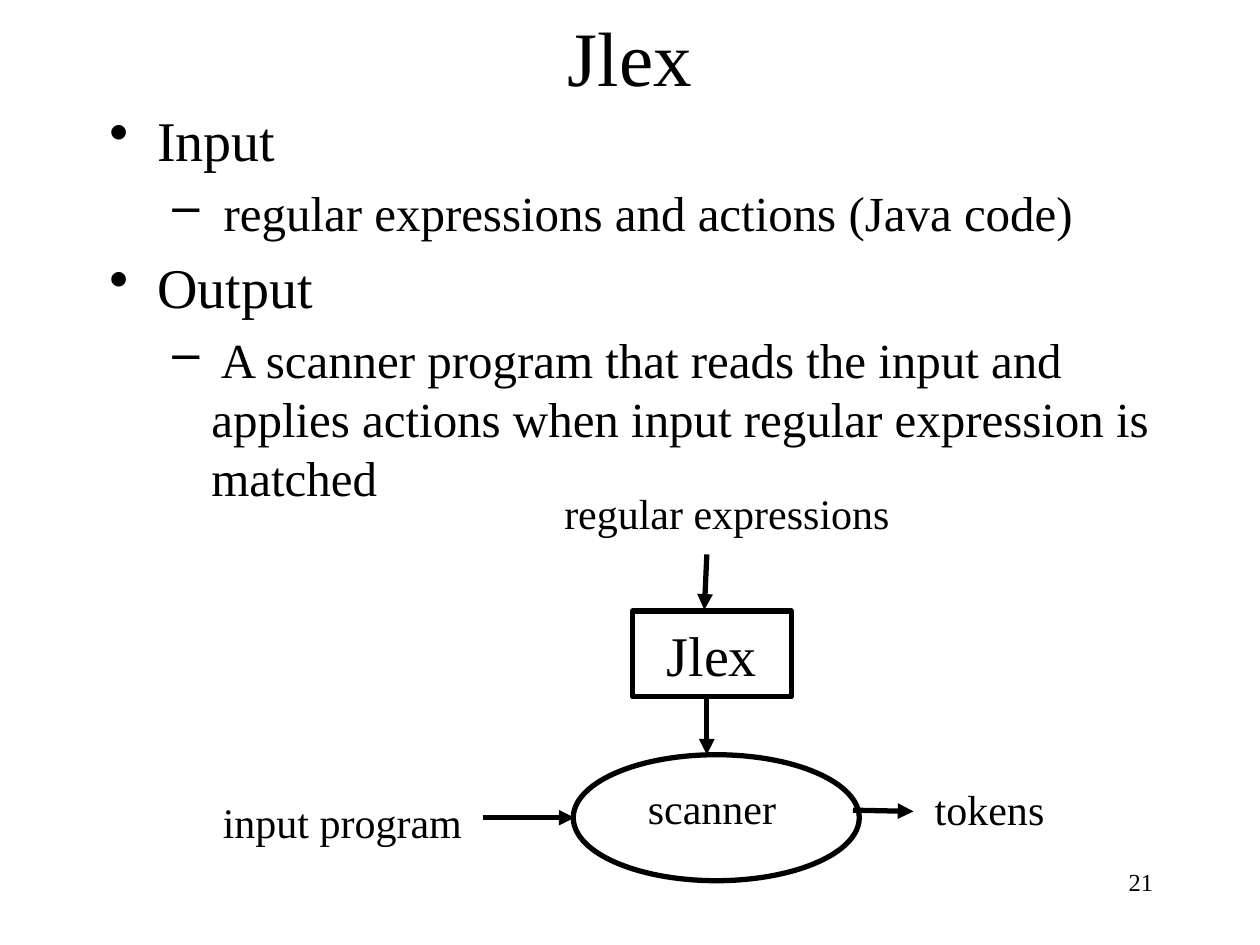
"""Build the Jlex slide: a bulleted outline above a scanner-generator diagram."""
from dataclasses import dataclass

import lxml.etree
import pptx
import pptx.dml.color
import pptx.enum.shapes
import pptx.enum.text
import pptx.oxml.ns
import pptx.util

COLUMNS, ROWS = 100, 75
CELL = pptx.util.Inches(0.1)
FONT = "Times New Roman"
INK = "000000"
ALIGN = pptx.enum.text.PP_ALIGN
ANCHOR = pptx.enum.text.MSO_ANCHOR
SHAPE = pptx.enum.shapes.MSO_SHAPE


@dataclass
class Area:
    column: float
    row: float
    columns: float
    rows: float


@dataclass
class Label:
    text: str
    area: Area
    size: int = 24
    align: ALIGN = ALIGN.LEFT
    anchor: ANCHOR = ANCHOR.MIDDLE
    wrap: bool = True


@dataclass
class Arrow:
    start: tuple[float, float]
    end: tuple[float, float]


@dataclass
class Node:
    outline: SHAPE
    area: Area
    text: str = ""


@dataclass
class Bullet:
    text: str
    mark: str
    size: int
    margin: float
    hanging: float
    gap: float


def topic(text: str, gap: float = 6.4) -> Bullet:
    """Return a first-level bullet."""
    return Bullet(text, "•", 32, 3.8, 3.8, gap)


def detail(text: str) -> Bullet:
    """Return a second-level bullet."""
    return Bullet(text, "–", 28, 8.1, 3.1, 5.6)


TITLE = Label("Jlex", Area(7.5, -0.1, 85, 9.1), 44, ALIGN.CENTER)
OUTLINE_AREA = Area(7.7, 7.9, 86.4, 63.3)
OUTLINE = [
    topic("Input", gap=0),
    detail(" regular expressions and actions (Java code)"),
    topic("Output"),
    detail(" A scanner program that reads the input and applies actions "
           "when input regular expression is matched"),
]
NODES = [
    Node(SHAPE.RECTANGLE, Area(50.2, 48.5, 12.6, 6.8), "Jlex"),
    Node(SHAPE.OVAL, Area(45.5, 59.9, 22.7, 10)),
]
LABELS = [
    Label("regular expressions", Area(43.8, 38.2, 27.8, 5), wrap=False),
    Label("input program", Area(16.7, 62.7, 21.7, 5)),
    Label("tokens", Area(73.2, 61.7, 24.8, 5)),
    Label("scanner", Area(44.4, 61.6, 24.2, 5), align=ALIGN.CENTER),
    Label("21", Area(71.7, 68.3, 20.8, 5), 14, ALIGN.RIGHT, ANCHOR.TOP),
]
ARROWS = [
    Arrow((56.1, 44), (55.9, 48.4)),
    Arrow((38.3, 64.9), (45.6, 64.9)),
    Arrow((67.7, 64.3), (72.5, 64.4)),
    Arrow((56.1, 55.2), (56.1, 59.9)),
]


def cells(count: float) -> int:
    """Convert a number of grid cells to a length."""
    return round(count * CELL)


def box(area: Area) -> tuple[int, int, int, int]:
    """Return left, top, width and height of a grid area."""
    return cells(area.column), cells(area.row), cells(area.columns), cells(area.rows)


def color(value: str) -> pptx.dml.color.RGBColor:
    """Convert a hex string to a colour."""
    return pptx.dml.color.RGBColor.from_string(value)


def style(paragraph, size: int) -> None:
    """Set the font of a paragraph."""
    paragraph.font.name = FONT
    paragraph.font.size = pptx.util.Pt(size)
    paragraph.font.color.rgb = color(INK)


def stroke(line) -> None:
    """Give a line the diagram's pen."""
    line.color.rgb = color(INK)
    line.width = pptx.util.Pt(3)


def write(shape, label: Label) -> None:
    """Put a label's text into a shape."""
    frame = shape.text_frame
    frame.word_wrap = label.wrap
    frame.vertical_anchor = label.anchor
    paragraph = frame.paragraphs[0]
    paragraph.text = label.text
    paragraph.alignment = label.align
    style(paragraph, label.size)


def add_label(slide, label: Label) -> None:
    """Add a free-standing label."""
    write(slide.shapes.add_textbox(*box(label.area)), label)


def add_node(slide, node: Node) -> None:
    """Add an outlined diagram node."""
    shape = slide.shapes.add_shape(node.outline, *box(node.area))
    shape.shadow.inherit = False
    shape.fill.background()
    stroke(shape.line)
    if node.text:
        write(shape, Label(node.text, node.area, 32, ALIGN.CENTER))


def add_arrow(slide, arrow: Arrow) -> None:
    """Add a straight arrow pointing at its end."""
    points = [cells(value) for value in (*arrow.start, *arrow.end)]
    connector = slide.shapes.add_connector(
        pptx.enum.shapes.MSO_CONNECTOR.STRAIGHT, *points)
    stroke(connector.line)
    pen = connector.line._get_or_add_ln()
    lxml.etree.SubElement(pen, pptx.oxml.ns.qn("a:tailEnd"), type="triangle")
    lxml.etree.SubElement(pen.getparent(), pptx.oxml.ns.qn("a:effectLst"))


def add_outline(slide, bullets: list[Bullet], area: Area) -> None:
    """Add the bulleted text."""
    frame = slide.shapes.add_textbox(*box(area)).text_frame
    frame.word_wrap = True
    for index, bullet in enumerate(bullets):
        paragraph = frame.add_paragraph() if index else frame.paragraphs[0]
        paragraph.text = bullet.text
        paragraph.space_before = pptx.util.Pt(bullet.gap)
        paragraph.line_spacing = pptx.util.Pt(bullet.size * 1.2)
        style(paragraph, bullet.size)
        properties = paragraph._p.get_or_add_pPr()
        properties.set("marL", str(cells(bullet.margin)))
        properties.set("indent", str(-cells(bullet.hanging)))
        mark = lxml.etree.Element(pptx.oxml.ns.qn("a:buChar"), char=bullet.mark)
        properties.find(pptx.oxml.ns.qn("a:defRPr")).addprevious(mark)


def main() -> None:
    """Build and save the slide."""
    deck = pptx.Presentation()
    deck.slide_width, deck.slide_height = cells(COLUMNS), cells(ROWS)
    slide = deck.slides.add_slide(deck.slide_layouts.get_by_name("Title Only"))
    title = slide.shapes.title
    title.left, title.top, title.width, title.height = box(TITLE.area)
    write(title, TITLE)
    add_outline(slide, OUTLINE, OUTLINE_AREA)
    for node in NODES:
        add_node(slide, node)
    for label in LABELS:
        add_label(slide, label)
    for arrow in ARROWS:
        add_arrow(slide, arrow)
    deck.save("out.pptx")


if __name__ == "__main__":
    main()
